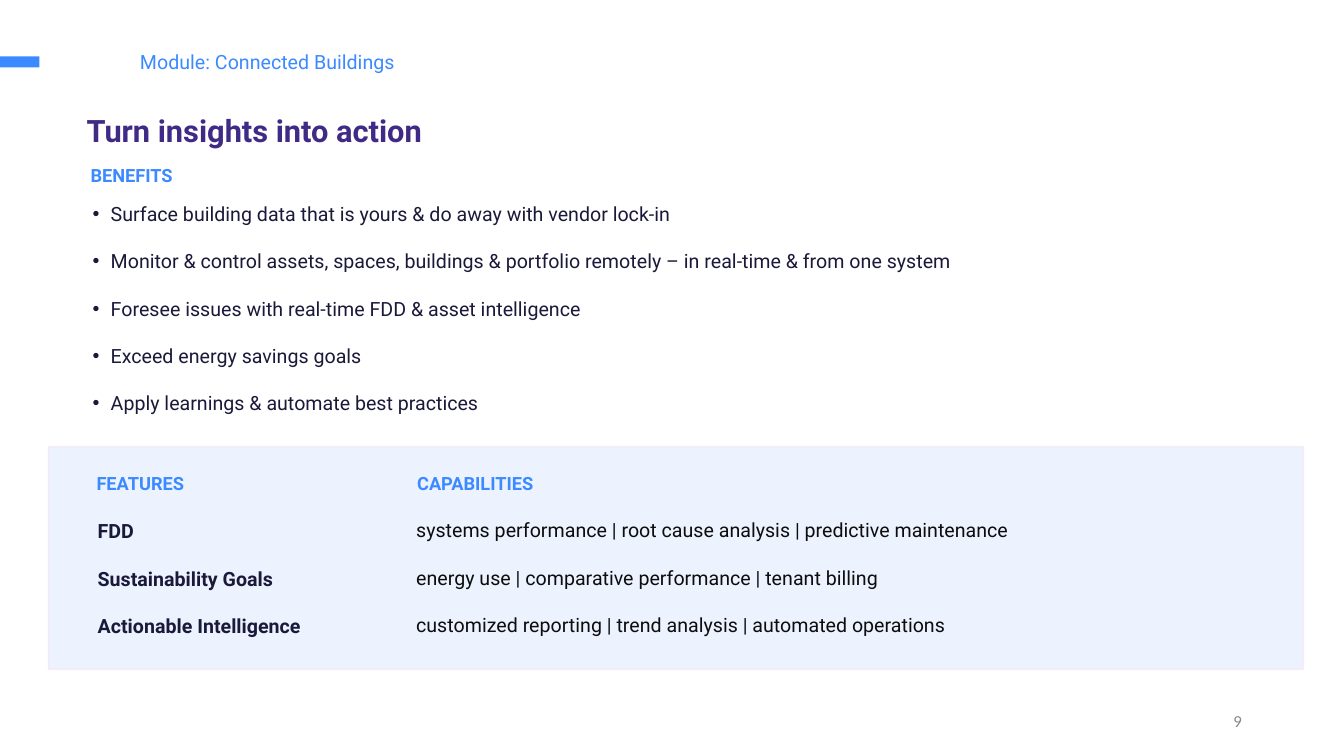
from dataclasses import dataclass

from lxml.etree import SubElement
from pptx import Presentation
from pptx.dml.color import RGBColor
from pptx.enum.shapes import MSO_SHAPE
from pptx.enum.text import MSO_ANCHOR, PP_ALIGN
from pptx.oxml.ns import qn
from pptx.shapes.autoshape import Shape
from pptx.slide import Slide
from pptx.text.text import _Paragraph
from pptx.util import Pt

BLUE = "3C8AFF"
NAVY = "1B1939"
LINE_GAP = 17.1


@dataclass(frozen=True)
class TextBlock:
    lines: tuple[str, ...]
    left: float
    top: float
    width: float
    height: float
    size: float = 14
    color: str = NAVY
    bold: bool = False
    font: str = "Roboto"
    margin: float = 0
    hanging: float = 0
    align: PP_ALIGN = PP_ALIGN.LEFT
    anchor: MSO_ANCHOR = MSO_ANCHOR.TOP


@dataclass(frozen=True)
class Panel:
    left: float
    top: float
    width: float
    height: float
    fill: str


def heading(label: str, left: float, top: float) -> TextBlock:
    return TextBlock((label,), left, top, 122.4, 23, 13, BLUE, True)


BENEFITS = (
    "Surface building data that is yours & do away with vendor lock-in",
    "Monitor & control assets, spaces, buildings & portfolio remotely – in real-time & from one system",
    "Foresee issues with real-time FDD & asset intelligence",
    "Exceed energy savings goals",
    "Apply learnings & automate best practices",
)
FEATURES = ("FDD", "Sustainability Goals", "Actionable Intelligence")
CAPABILITIES = (
    "systems performance | root cause analysis | predictive maintenance",
    "energy use | comparative performance | tenant billing",
    "customized reporting | trend analysis | automated operations",
)

ACCENT_BAR = Panel(0, 40.3, 28.1, 7.9, BLUE)
FEATURE_PANEL = Panel(34.6, 319, 896.4, 159.1, "ECF3FF")

TEXT_BLOCKS = (
    TextBlock(("Module: Connected Buildings",), 92.9, 32.4, 282.2, 24.5, color=BLUE),
    TextBlock(("Turn insights into action",), 54.7, 76.3, 536.4, 33.8, 22, "3F2B85", True),
    heading("BENEFITS", 57.6, 113.8),
    TextBlock(BENEFITS, 49.7, 140.4, 776.9, 159.8, margin=22.3, hanging=13),
    heading("FEATURES", 61.9, 334.1),
    heading("CAPABILITIES", 290.9, 334.1),
    TextBlock(FEATURES, 53.3, 367.2, 189.4, 92.2, bold=True, margin=9.4),
    TextBlock(CAPABILITIES, 280.8, 366.5, 463.7, 111.6, color="0D0D0D", margin=9.4),
    TextBlock(("9",), 678.2, 500.4, 216, 28.8, 12, "888888", font="Calibri",
              align=PP_ALIGN.RIGHT, anchor=MSO_ANCHOR.MIDDLE),
)


def rgb(color: str) -> RGBColor:
    return RGBColor.from_string(color)


def indent(paragraph: _Paragraph, block: TextBlock) -> None:
    properties = paragraph._p.get_or_add_pPr()
    properties.set("marL", str(Pt(block.margin)))
    properties.set("indent", str(-Pt(block.hanging)))
    if block.hanging:
        bullet_color = SubElement(properties, qn("a:buClr"))
        SubElement(bullet_color, qn("a:srgbClr"), val=block.color)
        SubElement(properties, qn("a:buFont"), typeface="Arial")
        SubElement(properties, qn("a:buChar"), char="•")


def add_text(slide: Slide, block: TextBlock) -> None:
    box = slide.shapes.add_textbox(
        Pt(block.left), Pt(block.top), Pt(block.width), Pt(block.height))
    frame = box.text_frame
    frame.word_wrap = True
    frame.vertical_anchor = block.anchor
    for index, line in enumerate(block.lines):
        paragraph = frame.add_paragraph() if index else frame.paragraphs[0]
        paragraph.text = line
        paragraph.alignment = block.align
        indent(paragraph, block)
        if index:
            paragraph.space_before = Pt(LINE_GAP)
        font = paragraph.font
        font.name = block.font
        font.size = Pt(block.size)
        font.bold = block.bold
        font.color.rgb = rgb(block.color)


def add_panel(slide: Slide, panel: Panel) -> Shape:
    shape = slide.shapes.add_shape(
        MSO_SHAPE.RECTANGLE,
        Pt(panel.left), Pt(panel.top), Pt(panel.width), Pt(panel.height))
    shape.shadow.inherit = False
    shape.fill.solid()
    shape.fill.fore_color.rgb = rgb(panel.fill)
    shape.line.fill.background()
    return shape


def add_faint_outline(shape: Shape, color: str, opacity: int) -> None:
    shape.line.color.rgb = rgb(color)
    shape.line.width = Pt(1)
    outline_color = shape.line._get_or_add_ln().find(f".//{qn('a:srgbClr')}")
    SubElement(outline_color, qn("a:alpha"), val=str(opacity * 1000))


def main() -> None:
    presentation = Presentation()
    presentation.slide_width = Pt(960)
    presentation.slide_height = Pt(540)
    slide = presentation.slides.add_slide(presentation.slide_layouts[6])
    add_panel(slide, ACCENT_BAR)
    add_faint_outline(add_panel(slide, FEATURE_PANEL), "F34A9E", 8)
    for block in TEXT_BLOCKS:
        add_text(slide, block)
    presentation.save("out.pptx")


if __name__ == "__main__":
    main()
